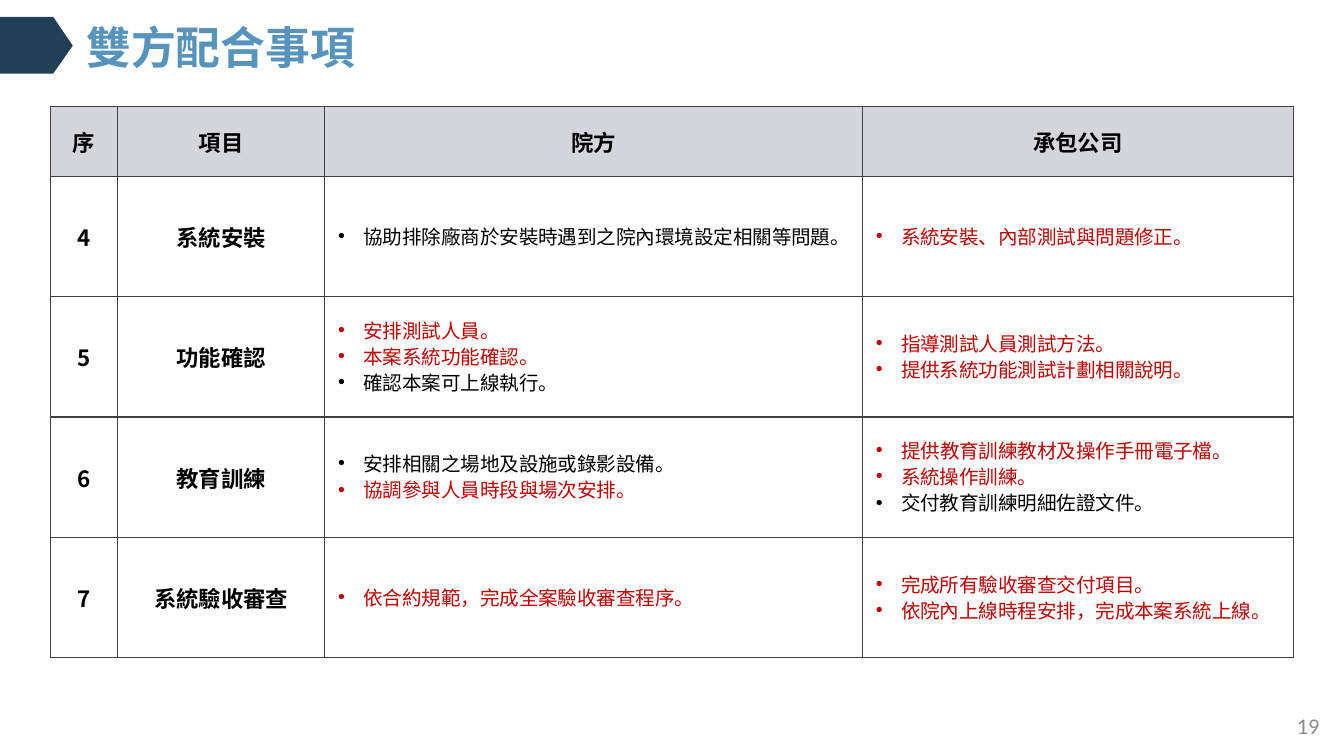
from lxml.etree import SubElement
from pptx import Presentation
from pptx.dml.color import RGBColor as Rgb
from pptx.enum.text import MSO_ANCHOR as Anchor, MSO_AUTO_SIZE as Auto, PP_ALIGN as Align
from pptx.oxml import parse_xml
from pptx.oxml.ns import nsdecls, qn
from pptx.util import Pt

INK = {"navy": "214055", "blue": "5693BD", "black": "000000", "red": "C00000",
       "head": "D5D6DB", "rule": "404040", "gray": "8C8C8C"}
SC, TC = "Noto Sans CJK SC", "Noto Sans CJK TC"


def write(para, text, size=12, ink="black", bold=False, font=SC, align=Align.LEFT):
    para.alignment = align
    run = para.add_run()
    run.text = text
    face = run.font
    face.size, face.bold, face.name = Pt(size), bold, font
    face.color.rgb = Rgb.from_string(INK[ink])
    SubElement(run._r.get_or_add_rPr(), qn("a:ea")).set("typeface", font)


def point(ink, text, font=SC):
    return ink, [(text, font)]


class Deck:
    def __init__(self, wide, high):
        self.show = Presentation()
        self.show.slide_width, self.show.slide_height = Pt(wide), Pt(high)
        self.slide = self.show.slides.add_slide(self.show.slide_layouts[5])
        self.rule = 0.75

    def title(self, text, box):
        hold = self.slide.shapes.title
        hold.left, hold.top, hold.width, hold.height = map(Pt, box)
        frame = hold.text_frame
        frame.auto_size, frame.vertical_anchor = Auto.NONE, Anchor.MIDDLE
        frame.paragraphs[0].line_spacing = 0.9
        write(frame.paragraphs[0], text, size=24, ink="blue", bold=True)

    def flag(self, dots, ink):
        dots = [(Pt(x), Pt(y)) for x, y in dots]
        pen = self.slide.shapes.build_freeform(*dots[0])
        pen.add_line_segments(dots[1:], close=True)
        shape = pen.convert_to_shape()
        shape.shadow.inherit = False
        shape.fill.solid()
        shape.fill.fore_color.rgb = Rgb.from_string(INK[ink])
        shape.line.fill.background()

    def label(self, text, box, **style):
        frame = self.slide.shapes.add_textbox(*map(Pt, box)).text_frame
        frame.word_wrap, frame.vertical_anchor = True, Anchor.MIDDLE
        write(frame.paragraphs[0], text, **style)

    def edge(self, cell):
        props = cell._tc.get_or_add_tcPr()
        for spot, side in enumerate("LRTB"):
            props.insert(spot, parse_xml(
                f'<a:ln{side} {nsdecls("a")} w="{Pt(self.rule)}"><a:solidFill>'
                f'<a:srgbClr val="{INK["rule"]}"/></a:solidFill></a:ln{side}>'))

    def bullet(self, para, ink, bits):
        para.line_spacing = Pt(14)
        props = para._p.get_or_add_pPr()
        props.set("marL", str(Pt(13.5)))
        props.set("indent", str(-Pt(13.5)))
        SubElement(props, qn("a:buFont")).set("typeface", "Arial")
        SubElement(props, qn("a:buChar")).set("char", "•")
        for text, font in bits:
            write(para, text, size=10.5, ink=ink, font=font)

    def fill(self, cell, item, head):
        cell.vertical_anchor = Anchor.MIDDLE
        if head:
            cell.fill.solid()
            cell.fill.fore_color.rgb = Rgb.from_string(INK["head"])
        else:
            cell.fill.background()
        self.edge(cell)
        frame = cell.text_frame
        if isinstance(item, str):
            write(frame.paragraphs[0], item, bold=True, align=Align.CENTER)
            return
        cell.margin_right = Pt(3)
        for spot, (ink, bits) in enumerate(item):
            para = frame.add_paragraph() if spot else frame.paragraphs[0]
            self.bullet(para, ink, bits)

    def table(self, rows, left, top, cols, highs):
        grid = self.slide.shapes.add_table(
            len(rows), len(cols), Pt(left), Pt(top), Pt(sum(cols)), Pt(sum(highs))).table
        grid.first_row = grid.horz_banding = False
        for col, wide in zip(grid.columns, cols):
            col.width = Pt(wide)
        for spot, (row, high) in enumerate(zip(rows, highs)):
            grid.rows[spot].height = Pt(high)
            for place, item in enumerate(row):
                self.fill(grid.cell(spot, place), item, spot == 0)


ROWS = [
    ["序", "項目", "院方", "承包公司"],
    ["4", "系統安裝",
     [point("black", "協助排除廠商於安裝時遇到之院內環境設定相關等問題。")],
     [point("red", "系統安裝、內部測試與問題修正。")]],
    ["5", "功能確認",
     [point("red", "安排測試人員。"),
      point("red", "本案系統功能確認。"),
      point("black", "確認本案可上線執行。")],
     [point("red", "指導測試人員測試方法。"),
      point("red", "提供系統功能測試計劃相關說明。", TC)]],
    ["6", "教育訓練",
     [point("black", "安排相關之場地及設施或錄影設備。"),
      point("red", "協調參與人員時段與場次安排。")],
     [("red", [("提供", SC), ("教育訓練教材及操作手冊電子檔", TC), ("。", SC)]),
      point("red", "系統操作訓練。"),
      point("black", "交付教育訓練明細佐證文件。", TC)]],
    ["7", "系統驗收審查",
     [point("red", "依合約規範，完成全案驗收審查程序。")],
     [point("red", "完成所有驗收審查交付項目。"),
      point("red", "依院內上線時程安排，完成本案系統上線。")]],
]


def main():
    deck = Deck(720, 405)
    deck.flag([(0, 9), (28.5, 9), (39, 24.5), (28.5, 39.5), (0, 39.5)], "navy")
    deck.title("雙方配合事項", (39, 5, 574, 44))
    deck.table(ROWS, 27, 57, [36, 111, 288, 231], [37.5] + [64.5] * 4)
    deck.label("19", (552, 378, 162, 21.5), ink="gray", font="Calibri", align=Align.RIGHT)
    deck.show.save("out.pptx")


if __name__ == "__main__":
    main()
